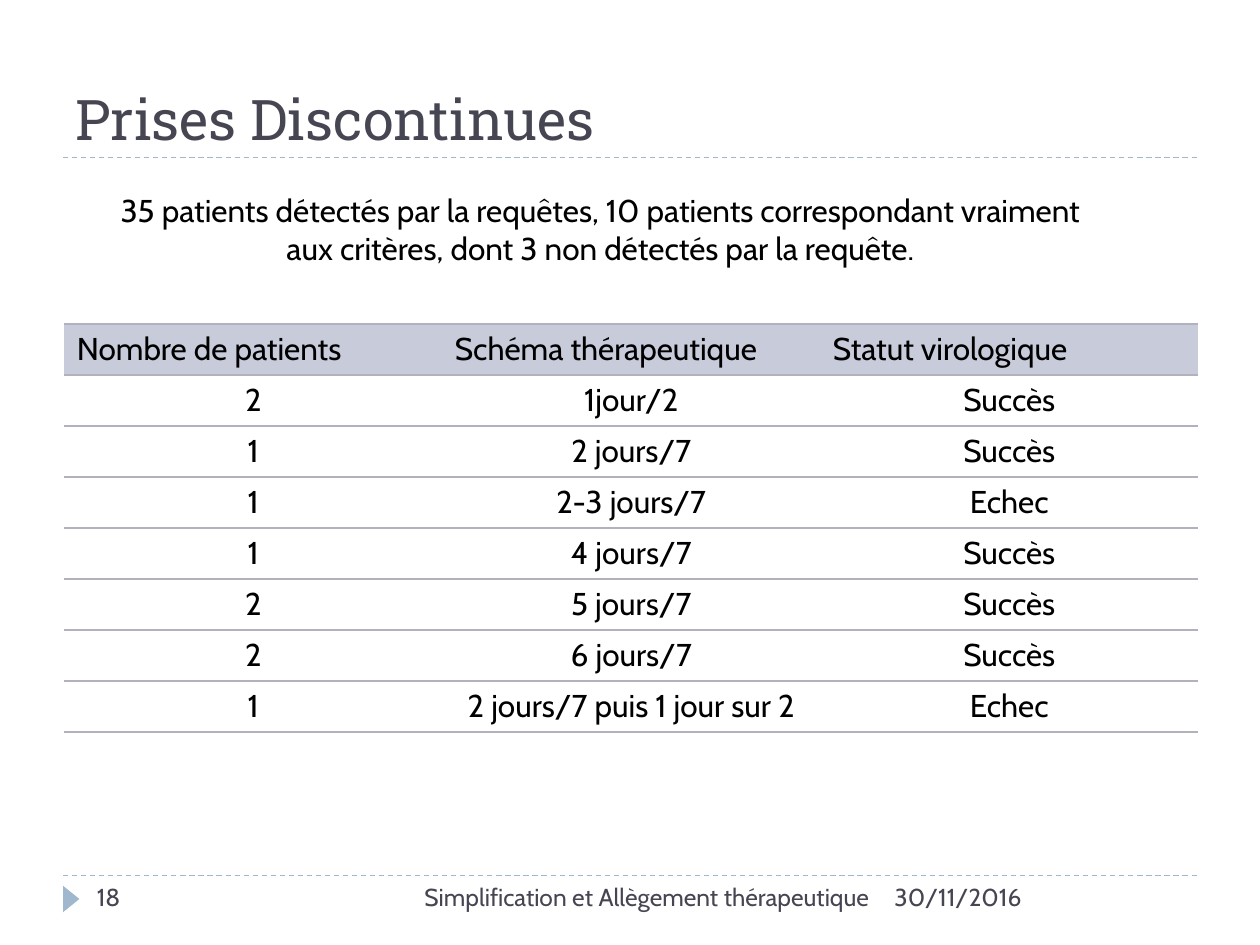
from pptx import Presentation
from pptx.dml.color import RGBColor
from pptx.enum.dml import MSO_LINE
from pptx.enum.shapes import MSO_CONNECTOR, MSO_SHAPE
from pptx.enum.text import MSO_ANCHOR as Anchor, PP_ALIGN as Align
from pptx.oxml import parse_xml
from pptx.oxml.ns import nsdecls
from pptx.util import Inches, Pt

BLACK = RGBColor(0x00, 0x00, 0x00)
SLATE = RGBColor(0x46, 0x46, 0x53)
BLUE = RGBColor(0x9F, 0xB8, 0xCD)
HEAD = RGBColor(0xC7, 0xCB, 0xDA)
RULE = RGBColor(0xB2, 0xB2, 0xBE)
PLAIN_STYLE = "{2D5ABB26-0587-4C30-8999-92F81FD0307C}"


def write(frame, text, size=18, font="Cabin", color=BLACK,
          align=Align.LEFT, anchor=Anchor.TOP):
    frame.word_wrap = True
    frame.vertical_anchor = anchor
    par = frame.paragraphs[0]
    par.alignment = align
    run = par.add_run()
    run.text = text
    run.font.size = Pt(size)
    run.font.name = font
    run.font.color.rgb = color


def add_edge(cell, side):
    """Draw one border of a table cell; side is T or B."""
    cell._tc.get_or_add_tcPr().append(parse_xml(
        f'<a:ln{side} {nsdecls("a")} w="{Pt(1)}"><a:solidFill>'
        f'<a:srgbClr val="{RULE}"/></a:solidFill></a:ln{side}>'))


deck = Presentation()
deck.slide_width, deck.slide_height = Inches(10), Inches(7.5)
slide = deck.slides.add_slide(deck.slide_layouts[6])
shapes = slide.shapes

# Dashed rules and the page marker
for y in (6.95, 1.25):
    line = shapes.add_connector(MSO_CONNECTOR.STRAIGHT, Inches(0.5), Inches(y),
                                Inches(9.5), Inches(y))
    line.line.color.rgb = BLUE
    line.line.width = Pt(0.75)
    line.line.dash_style = MSO_LINE.DASH
    line._element.spPr.append(parse_xml(f'<a:effectLst {nsdecls("a")}/>'))

mark = shapes.add_shape(MSO_SHAPE.ISOSCELES_TRIANGLE, Inches(0.46),
                        Inches(7.07), Inches(0.21), Inches(0.13))
mark.rotation = 90
mark.shadow.inherit = False
mark.fill.solid()
mark.fill.fore_color.rgb = BLUE
mark.line.fill.background()

# Title, introduction and footer
small = dict(size=14, color=SLATE)
texts = [
    ((0.5, 0.17, 9, 1.08), "Prises Discontinues",
     dict(size=32, font="Roboto Slab", color=SLATE, anchor=Anchor.BOTTOM)),
    ((0.75, 1.47, 8.03, 1.01),
     "35 patients détectés par la requêtes, 10 patients correspondant vraiment "
     "aux critères, dont 3 non détectés par la requête.",
     dict(align=Align.CENTER)),
    ((0.67, 6.95, 2.17, 0.4), "18", small),
    ((3.17, 6.95, 3.83, 0.4), "Simplification et Allègement thérapeutique",
     dict(small, align=Align.RIGHT)),
    ((7, 6.95, 2.5, 0.4), "30/11/2016", small),
]
for place, text, style in texts:
    box = shapes.add_textbox(*map(Inches, place))
    write(box.text_frame, text, **style)

# Table of treatment schemes
rows = [
    ("Nombre de patients", "Schéma thérapeutique", "Statut virologique"),
    ("2", "1jour/2", "Succès"),
    ("1", "2 jours/7", "Succès"),
    ("1", "2-3 jours/7", "Echec"),
    ("1", "4 jours/7", "Succès"),
    ("2", "5 jours/7", "Succès"),
    ("2", "6 jours/7", "Succès"),
    ("1", "2 jours/7 puis 1 jour sur 2", "Echec"),
]
frame = shapes.add_table(len(rows), 3, Inches(0.51), Inches(2.57),
                         Inches(9), Inches(3.24))
table = frame.table
table.horz_banding = False
table._tbl.tblPr[0].text = PLAIN_STYLE
for r, row in enumerate(rows):
    for c, text in enumerate(row):
        cell = table.cell(r, c)
        add_edge(cell, "T")
        add_edge(cell, "B")
        if r == 0:
            cell.fill.solid()
            cell.fill.fore_color.rgb = HEAD
        else:
            cell.fill.background()
        write(cell.text_frame, text,
              align=Align.CENTER if r else Align.LEFT)

deck.save("out.pptx")
